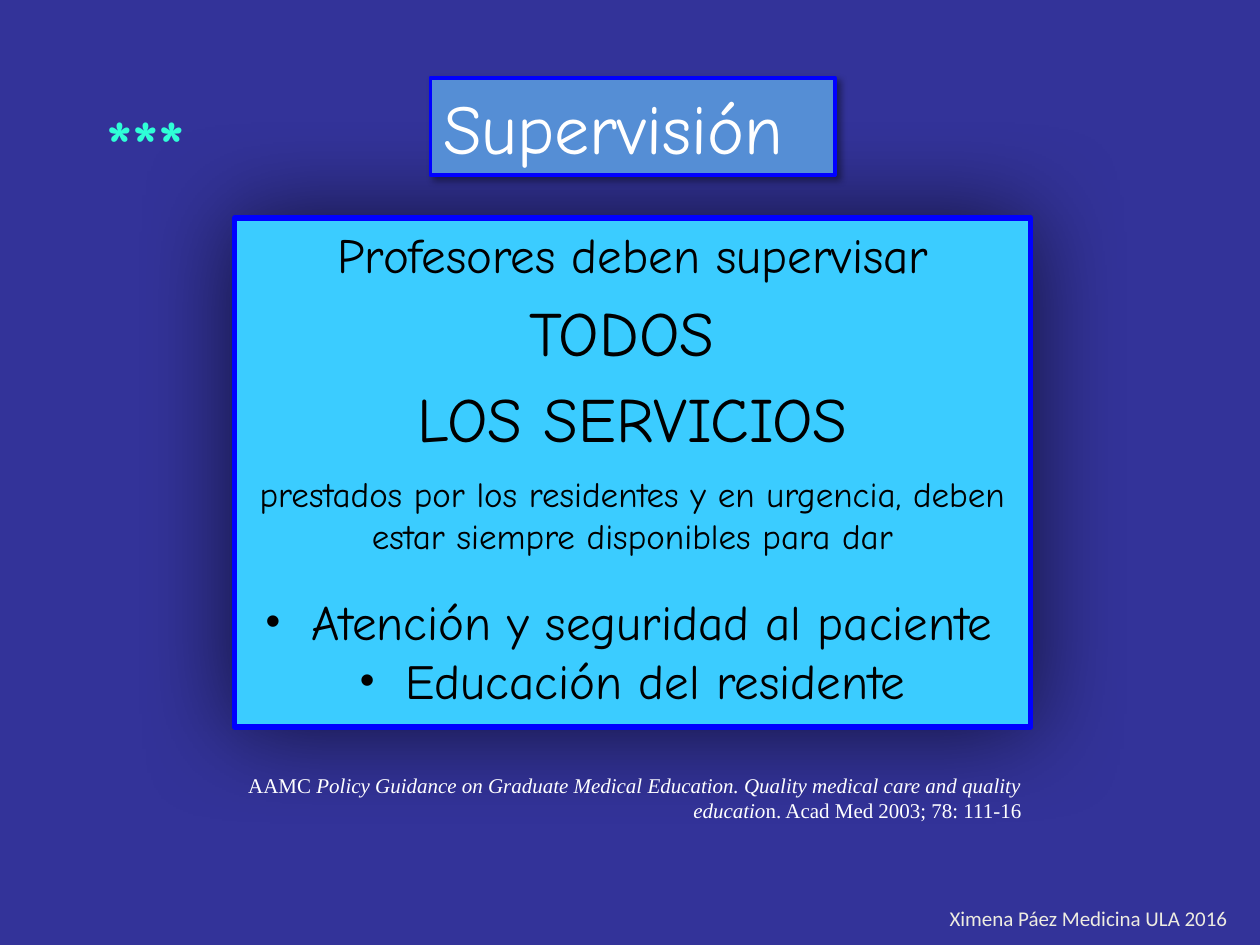
from dataclasses import dataclass

from lxml import etree
from pptx import Presentation
from pptx.dml.color import RGBColor
from pptx.enum.text import MSO_ANCHOR, MSO_AUTO_SIZE, PP_ALIGN
from pptx.oxml.ns import qn
from pptx.util import Pt

LEFT, CENTER, RIGHT = PP_ALIGN.LEFT, PP_ALIGN.CENTER, PP_ALIGN.RIGHT
TOP = MSO_ANCHOR.TOP
NO_FIT = MSO_AUTO_SIZE.NONE
COMIC, TIMES, CALIBRI = "Comic Neue", "Times New Roman", "Calibri"
BLUE, BLACK, WHITE = "0000FF", "000000", "FFFFFF"
BULLET_INDENT = 18


@dataclass
class Run:
    text: str
    size: float
    font: str = COMIC
    color: str = BLACK
    bold: bool = False
    italic: bool = False


@dataclass
class Para:
    runs: list[Run]
    align: PP_ALIGN = LEFT
    before: float = 0
    bullet: bool = False


@dataclass
class Box:
    left: float
    top: float
    width: float
    height: float


@dataclass
class Shadow:
    alpha: int
    blur: float
    distance: float
    angle: int


def rgb(color: str) -> RGBColor:
    return RGBColor.from_string(color)


def place(sp, box: Box) -> None:
    sp.left, sp.top = Pt(box.left), Pt(box.top)
    sp.width, sp.height = Pt(box.width), Pt(box.height)


def set_bullet(p, bullet: bool) -> None:
    indent = BULLET_INDENT if bullet else 0
    p_pr = p._p.get_or_add_pPr()
    p_pr.set("marL", str(Pt(indent)))
    p_pr.set("indent", str(-Pt(indent)))
    if bullet:
        etree.SubElement(p_pr, qn("a:buFont")).set("typeface", "Arial")
        etree.SubElement(p_pr, qn("a:buChar")).set("char", "•")
    else:
        etree.SubElement(p_pr, qn("a:buNone"))


def write(sp, paras: list[Para], wrap: bool = True) -> list:
    """Fill the text frame and return the runs that were made."""
    tf = sp.text_frame
    tf.word_wrap, tf.auto_size, tf.vertical_anchor = wrap, NO_FIT, TOP
    made = []
    for i, para in enumerate(paras):
        p = tf.add_paragraph() if i else tf.paragraphs[0]
        p.alignment, p.space_before = para.align, Pt(para.before)
        set_bullet(p, para.bullet)
        for run in para.runs:
            r = p.add_run()
            r.text = run.text
            r.font.name, r.font.size = run.font, Pt(run.size)
            r.font.bold, r.font.italic = run.bold, run.italic
            r.font.color.rgb = rgb(run.color)
            made.append(r)
    return made


def add_shadow(effects, shadow: Shadow) -> None:
    outer = etree.SubElement(
        effects, qn("a:outerShdw"), blurRad=str(Pt(shadow.blur)),
        dist=str(Pt(shadow.distance)), dir=str(shadow.angle * 60000),
        algn="ctr", rotWithShape="0")
    color = etree.SubElement(outer, qn("a:srgbClr"), val=BLACK)
    etree.SubElement(color, qn("a:alpha"), val=str(shadow.alpha * 1000))


def style_panel(sp, box: Box, fill: str, line: float, shadow: Shadow) -> None:
    place(sp, box)
    sp.fill.solid()
    sp.fill.fore_color.rgb = rgb(fill)
    sp.line.color.rgb = rgb(BLUE)
    sp.line.width = Pt(line)
    sp.shadow.inherit = False
    add_shadow(sp._element.spPr.find(qn("a:effectLst")), shadow)


def add_label(s, box: Box, para: Para, wrap: bool = True) -> list:
    sp = s.shapes.add_textbox(0, 0, 0, 0)
    place(sp, box)
    return write(sp, [para], wrap)


def main() -> None:
    prs = Presentation()
    prs.slide_width, prs.slide_height = Pt(720), Pt(540)
    s = prs.slides.add_slide(prs.slide_layouts[1])
    s.background.fill.solid()
    s.background.fill.fore_color.rgb = rgb("333399")

    title, body = s.shapes.title, s.placeholders[1]
    body._element.addnext(title._element)  # the title lies over the body's shadow
    soft = Shadow(40, 4, 3, 45)

    style_panel(body, Box(134, 124.5, 455, 291), "3BCCFF", 3, Shadow(63, 58, 0, 199))
    write(body, [
        Para([Run("Profesores deben supervisar", 28)], CENTER),
        Para([Run("TODOS ", 36)], CENTER, 6),
        Para([Run("LOS SERVICIOS", 36)], CENTER, 6),
        Para([Run("prestados por los residentes y en urgencia, deben "
                  "estar siempre disponibles para dar", 20)], CENTER, 10),
        Para([Run(" ", 24), Run("Atención y seguridad al paciente", 28),
              Run(" ", 12)], CENTER, 20, True),
        Para([Run(" ", 24), Run("Educación del residente", 28)], CENTER, 0, True),
    ])

    style_panel(title, Box(246, 44.5, 231, 55.5), "558ED5", 2.25, soft)
    write(title, [Para([Run("Supervisión", 40, color=WHITE)])])

    add_label(s, Box(126.5, 438, 464.5, 36), Para([
        Run("AAMC ", 12, TIMES, WHITE),
        Run("Policy Guidance on Graduate Medical Education. Quality medical care "
            "and quality educatio", 12, TIMES, WHITE, italic=True),
        Run("n. Acad Med 2003; 78: 111-16", 12, TIMES, WHITE),
    ], RIGHT))
    add_label(s, Box(535.5, 514, 181.5, 22),
              Para([Run("Ximena Páez Medicina ULA 2016", 12, CALIBRI, "EEECE1")]),
              wrap=False)
    stars = add_label(s, Box(53.5, 54, 79, 55.5),
                      Para([Run("***", 40, color="2FFFD7", bold=True)]))
    effects = etree.Element(qn("a:effectLst"))
    add_shadow(effects, soft)
    stars[0].font._element.find(qn("a:solidFill")).addnext(effects)

    prs.save("out.pptx")


if __name__ == "__main__":
    main()
